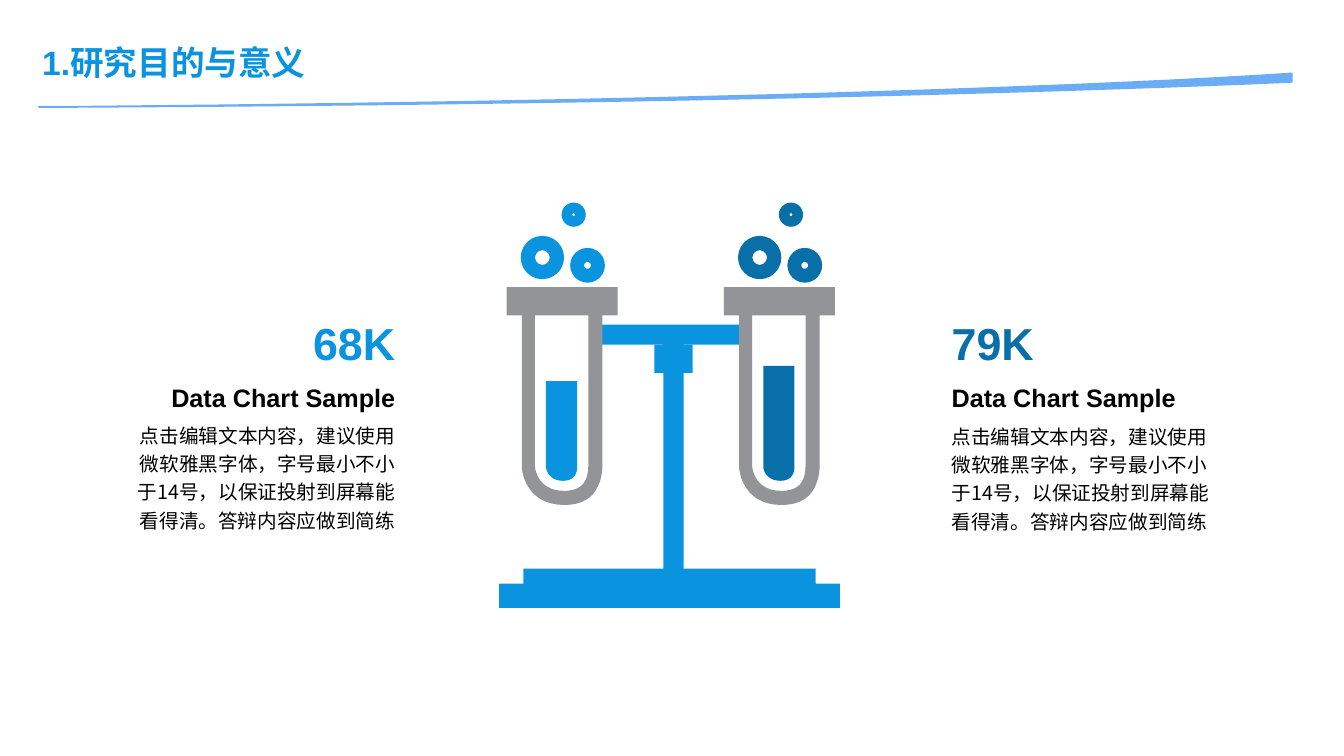
from pptx import Presentation
from pptx.dml.color import RGBColor
from pptx.enum.shapes import MSO_SHAPE
from pptx.enum.text import MSO_AUTO_SIZE, PP_ALIGN
from pptx.oxml.ns import qn
from pptx.util import Inches, Pt
from lxml.etree import SubElement

COLS, ROWS = 1333, 750  # the slide as a grid of square cells
CELL = Inches(0.01)
BLUE = RGBColor(0x0A, 0x94, 0xE0)
NAVY = RGBColor(0x08, 0x6F, 0xA8)
SKY = RGBColor(0x6A, 0xAC, 0xF6)
GREY = RGBColor(0x92, 0x94, 0x97)
BLACK = RGBColor(0, 0, 0)
LATIN, HAN = "Arial", "Noto Sans CJK SC"
BODY = "点击编辑文本内容，建议使用微软雅黑字体，字号最小不小于14号，以保证投射到屏幕能看得清。答辩内容应做到简练"

SWOOSH = [(1282, 72), (1282, 82), (1237, 84), (757, 103, 243, 106, 59, 107),
          (38, 107), (38, 105), (81, 105), (815, 99, 1197, 78, 1281, 72)]
BASE = [(809, 579), (809, 564), (519, 564), (519, 579),
        (495, 579), (495, 603), (833, 603), (833, 579)]
GLASS = [(0, 285), (110, 285), (110, 313), (95, 313), (95, 462),
         (95, 474, 91, 484, 85, 491), (78, 498, 69, 501, 57, 501),
         (22, 501, 15, 472, 15, 462), (15, 313), (0, 313)]
HOLLOW = [(81, 313), (81, 462), (81, 470, 79, 477, 75, 481),
          (71, 485, 65, 487, 57, 487), (29, 487, 28, 462, 28, 462), (28, 313)]
# left, top, size, ring share
BUBBLES = [(63, 246, 34.5, 0.4), (14, 234, 43, 0.33), (54.5, 201, 24, 0.44)]


def cells(*nums):
    return [round(n * CELL) for n in nums]


def paint(shape, color):
    shape.shadow.inherit = False
    shape.fill.solid()
    shape.fill.fore_color.rgb = color
    shape.line.fill.background()


def trace(steps, left=0, parts=16):
    """Turn points and six-number Bezier steps into a list of points."""
    dots = []
    for step in steps:
        if len(step) == 2:
            dots.append(step)
            continue
        (ax, ay), (bx, by, cx, cy, dx, dy) = dots[-1], step
        for i in range(1, parts + 1):
            t = i / parts
            u = 1 - t
            w = (u ** 3, 3 * u * u * t, 3 * u * t * t, t ** 3)
            dots.append((sum(k * v for k, v in zip(w, (ax, bx, cx, dx))),
                         sum(k * v for k, v in zip(w, (ay, by, cy, dy)))))
    return [cells(x + left, y) for x, y in dots]


def outline(shapes, color, *loops, left=0):
    first, *rest = [trace(loop, left) for loop in loops]
    pen = shapes.build_freeform(*first[0])
    pen.add_line_segments(first[1:])
    for loop in rest:
        pen.move_to(*loop[0])
        pen.add_line_segments(loop[1:])
    paint(pen.convert_to_shape(), color)


def block(shapes, *box):
    paint(shapes.add_shape(MSO_SHAPE.RECTANGLE, *cells(*box)), BLUE)


def tube(shapes, left, level, color):
    """Draw a test tube filled up to level, with its bubbles."""
    parts = shapes.add_group_shape().shapes
    outline(parts, GREY, GLASS, HOLLOW, left=left)
    liquid = [(39, level), (70, level), (70, 463),
              (70, 465, 70, 477, 56, 477), (42, 477, 39, 466, 39, 463)]
    outline(parts, color, liquid, left=left)
    for x, y, size, ring in BUBBLES:
        ball = parts.add_shape(MSO_SHAPE.DONUT, *cells(left + x, y, size, size))
        ball.adjustments[0] = ring
        paint(ball, color)


def label(shapes, text, box, size, color=BLACK, bold=True, name=LATIN,
          align=PP_ALIGN.LEFT, wrap=False, space=1.0):
    frame = shapes.add_textbox(*cells(*box)).text_frame
    frame.word_wrap = wrap
    frame.auto_size = MSO_AUTO_SIZE.SHAPE_TO_FIT_TEXT
    para = frame.paragraphs[0]
    para.alignment, para.line_spacing = align, space
    run = para.add_run()
    run.text = text
    style = {"size": Pt(size), "bold": bold, "name": name}
    for key, value in style.items():
        setattr(run.font, key, value)
    run.font.color.rgb = color
    SubElement(run.font._element, qn("a:ea")).set("typeface", HAN)


def caption(shapes, figure, color, edge, top, align):
    """Stack figure, heading and body against the given edge."""
    parts = shapes.add_group_shape().shapes

    def place(y, wide, high):
        left = edge - wide if align == PP_ALIGN.RIGHT else edge
        return left, y, wide, high

    label(parts, "Data Chart Sample", place(374, 245, 40), 18, align=align)
    label(parts, figure, place(308, 102, 64), 32, color, align=align)
    label(parts, BODY, place(top, 281, 123), 14, bold=False, name=HAN,
          align=align, wrap=True, space=1.2)


def main():
    deck = Presentation()
    deck.slide_width, deck.slide_height = cells(COLS, ROWS)
    shapes = deck.slides.add_slide(deck.slide_layouts[6]).shapes
    outline(shapes, SKY, SWOOSH)

    stand = shapes.add_group_shape().shapes
    block(stand, 594, 322, 139, 20)
    outline(stand, BLUE, BASE)
    block(stand, 658, 334, 20, 246)
    block(stand, 649, 342, 38, 28)

    tube(shapes, 718, 363, NAVY)
    tube(shapes, 502.5, 378, BLUE)
    caption(shapes, "68K", BLUE, 402, 411, PP_ALIGN.RIGHT)
    caption(shapes, "79K", NAVY, 934, 412, PP_ALIGN.LEFT)
    label(shapes, "1.研究目的与意义", (32, 37, 307, 50), 24, BLUE)
    deck.save("out.pptx")


if __name__ == "__main__":
    main()
